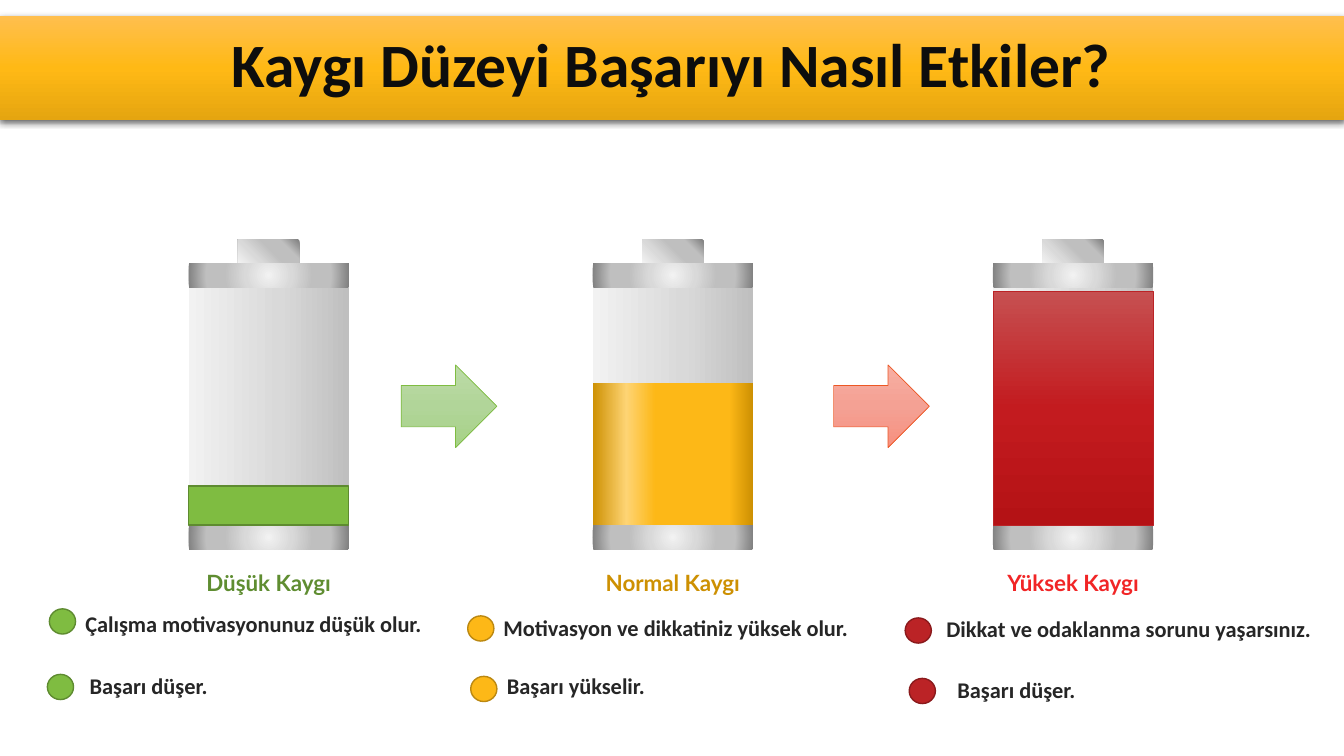
"""Builds a slide showing three anxiety levels as batteries, with their effect on success."""
from pptx import Presentation
from pptx import util as u
from pptx.dml.color import RGBColor
from pptx.enum import shapes, text
from pptx.oxml import parse_xml
from pptx.oxml.ns import nsdecls, qn

THEME = {
    "title": ("Calibri", 44, "0D0D0D"),
    "body": ("Calibri", 16, "262626"),
    "label_font": "Lato",
    "band": ([(0, "FFBF4E"), (50, "FFB915"), (100, "E5A510")], 90),
    "case": ([(0, "F2F2F2"), (57, "D9D9D9"), (100, "BFBFBF")], 0),
    "metal": [(0, "F2F2F2"), (29, "D9D9D9"), (55, "BFBFBF"), (77, "BFBFBF"), (100, "808080")],
    "low": "7FBC41",
    "normal": ([(0, "CD9002"), (21, "FED474"), (39, "FDB817"), (85, "FDB817"), (100, "CD9002")], 0),
    "high": ([(0, "C65051"), (50, "C31B1F"), (100, "B41215")], 90),
    "green_arrow": ([(0, "BCDBA7"), (50, "B1D599"), (100, "A6D286")], 90),
    "red_arrow": ([(0, "F7AEA2"), (50, "F4A194"), (100, "F7907F")], 90),
}
CENTER, CORNER = (50, 50, 50, 50), (0, 100, 100, 0)
MSO, PP = shapes.MSO_SHAPE, text.PP_ALIGN

prs = Presentation()
prs.slide_width, prs.slide_height = u.Inches(13.333), u.Inches(7.5)
cell = prs.slide_height / 7.5
slide = prs.slides.add_slide(prs.slide_layouts[5])


def paint(sp, fill):
    """Fill with one colour, or with stops and an angle or a focus rectangle."""
    if isinstance(fill, str):
        sp.fill.solid()
        sp.fill.fore_color.rgb = RGBColor.from_string(fill)
        return
    stops, direction = fill
    marks = "".join(f'<a:gs pos="{pos * 1000}"><a:srgbClr val="{color}"/></a:gs>' for pos, color in stops)
    if isinstance(direction, tuple):
        sides = " ".join(f'{side}="{share * 1000}"' for side, share in zip("ltrb", direction))
        flow = f'<a:path path="circle"><a:fillToRect {sides}/></a:path>'
    else:
        flow = f'<a:lin ang="{direction * 60000}" scaled="0"/>'
    sp.fill.background()
    spPr = sp._element.spPr
    spPr.replace(spPr.find(qn("a:noFill")), parse_xml(
        f'<a:gradFill {nsdecls("a")} rotWithShape="1"><a:gsLst>{marks}</a:gsLst>{flow}</a:gradFill>'))


def draw(kind, box, fill, line=None, width=1):
    """Add a preset shape on the grid."""
    sp = slide.shapes.add_shape(kind, *(int(v * cell) for v in box))
    sp.shadow.inherit = False
    paint(sp, fill)
    if line:
        sp.line.color.rgb = RGBColor.from_string(line)
        sp.line.width = u.Pt(width)
    else:
        sp.line.fill.background()


title = slide.shapes.title
title.left, title.top = 0, int(0.16 * cell)
title.width, title.height = prs.slide_width, int(1.03 * cell)
paint(title, THEME["band"])
title.shadow.inherit = False
title._element.spPr.find(qn("a:effectLst")).append(parse_xml(
    f'<a:outerShdw {nsdecls("a")} blurRad="57150" dist="19050" dir="5400000" algn="ctr" rotWithShape="0">'
    '<a:srgbClr val="000000"><a:alpha val="63000"/></a:srgbClr></a:outerShdw>'))
tf = title.text_frame
tf.text = "Kaygı Düzeyi Başarıyı Nasıl Etkiler?"
tf.vertical_anchor = text.MSO_ANCHOR.MIDDLE
p = tf.paragraphs[0]
p.alignment, p.line_spacing = PP.CENTER, 0.9
font = p.runs[0].font
font.name, font.size, font.bold = THEME["title"][0], u.Pt(THEME["title"][1]), True
font.color.rgb = RGBColor.from_string(THEME["title"][2])

body_font, body_size, body_color = THEME["body"]
case_w, cap_h, case_top, level_bottom = 1.59, 0.24, 2.61, 5.21
levels = [
    (1.87, 4.82, THEME["low"], "5E8B30", 1, "Düşük Kaygı", "5F8D31", ("7FBC41", "5E8B30"),
     [("Çalışma motivasyonunuz düşük olur.", 0.72, 6, 3.59, PP.CENTER, 0.49, 6.04),
      ("Başarı düşer.", 0.79, 6.62, 3.59, PP.LEFT, 0.47, 6.69)]),
    (5.88, 3.8, THEME["normal"], None, 1, "Normal Kaygı", "CD9002", ("FDB817", "BB8811"),
     [("Motivasyon ve dikkatiniz yüksek olur.", 4.74, 6.04, 3.93, PP.CENTER, 4.64, 6.11),
      ("Başarı yükselir.", 4.93, 6.62, 3.59, PP.LEFT, 4.67, 6.71)]),
    (9.85, 2.89, THEME["high"], "BB2326", 0.5, "Yüksek Kaygı", "F12526", ("BB2326", "8A1A1C"),
     [("Dikkat ve odaklanma sorunu yaşarsınız.", 9.29, 6.05, 3.87, PP.LEFT, 8.98, 6.13),
      ("Başarı düşer.", 9.4, 6.66, 3.93, PP.LEFT, 9.02, 6.73)]),
]
for x, level_top, level_fill, level_line, line_w, label, label_color, dot, effects in levels:
    draw(MSO.RECTANGLE, (x, case_top, case_w, 2.84), THEME["case"])
    draw(MSO.RECTANGLE, (x + 0.49, 2.38, 0.61, 0.23), (THEME["metal"], CORNER))
    for cap_top in (case_top, level_bottom):
        draw(MSO.RECTANGLE, (x, cap_top, case_w, cap_h), (THEME["metal"], CENTER))
    draw(MSO.RECTANGLE, (x, level_top, case_w, level_bottom - level_top), level_fill, level_line, line_w)

    captions = [(label, x, 5.6, case_w, PP.CENTER, THEME["label_font"], label_color, False)]
    for words, left, top, width, align, dot_x, dot_y in effects:
        draw(MSO.OVAL, (dot_x, dot_y, 0.26, 0.25), *dot)
        captions.append((words, left, top, width, align, body_font, body_color, True))
    for words, left, top, width, align, face, color, wrap in captions:
        sp = slide.shapes.add_textbox(*(int(v * cell) for v in (left, top, width, 0.37)))
        tf = sp.text_frame
        tf.text = words
        tf.word_wrap = wrap
        tf.auto_size = text.MSO_AUTO_SIZE.SHAPE_TO_FIT_TEXT
        p = tf.paragraphs[0]
        p.alignment = align
        r = p.runs[0]
        r.font.name, r.font.size, r.font.bold = face, u.Pt(body_size), True
        r.font.color.rgb = RGBColor.from_string(color)

for x, fill, line in ((3.98, THEME["green_arrow"], "7FBC41"), (8.27, THEME["red_arrow"], "EC5724")):
    draw(MSO.RIGHT_ARROW, (x, 3.62, 0.95, 0.82), fill, line, 0.5)

prs.save("out.pptx")
